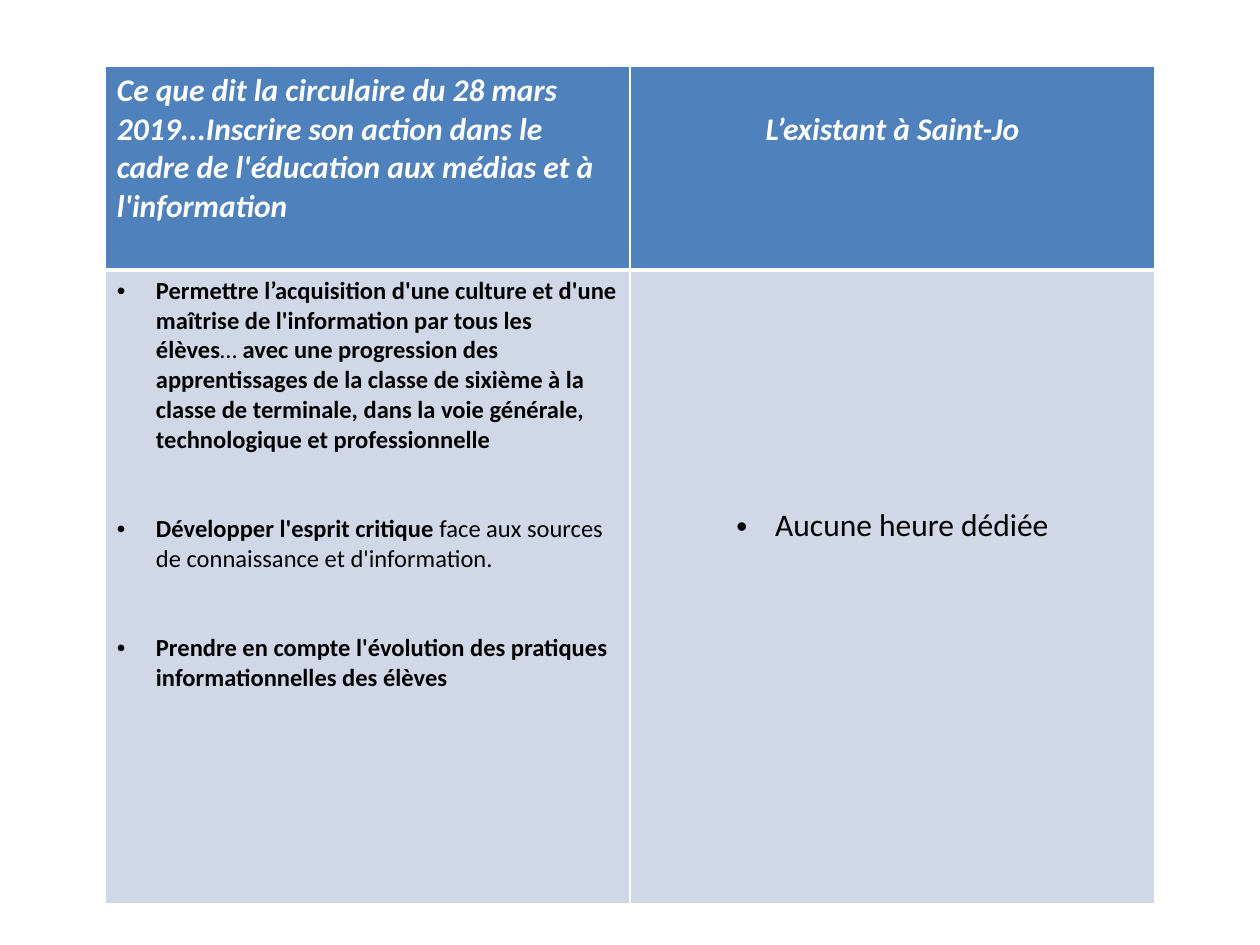
from dataclasses import dataclass

from lxml import etree
from pptx import Presentation
from pptx import util as u
from pptx.dml.color import RGBColor
from pptx.enum import text
from pptx.oxml import ns

EMU_PER_PX = 914400 / 126
INDENT = 39
SIDE_MARGIN, TOP_MARGIN = 12, 6
WHITE, BLACK, BLUE, PALE_BLUE = "FFFFFF", "000000", "4F81BD", "D0D8E8"
HEADER = {"name": "Calibri", "size": u.Pt(18), "bold": True, "italic": True}
STRONG = {"name": "Calibri", "size": u.Pt(14), "bold": True, "italic": False}
PLAIN = {**STRONG, "bold": False}
ANSWER = {**PLAIN, "size": u.Pt(18)}


@dataclass(frozen=True)
class Run:
    words: str
    font: dict


@dataclass(frozen=True)
class TableCell:
    row: int
    column: int
    paragraphs: list[list[Run]]
    fill: str
    ink: str
    borders: dict[str, int]
    top_margin: int = TOP_MARGIN
    bulleted: bool = False
    centered: bool = False


HEADER_BORDERS = {"L": 1, "R": 1, "T": 1, "B": 3}
BODY_BORDERS = {"L": 1, "R": 1, "T": 3, "B": 1}
CELLS = [
    TableCell(0, 0, [[Run("Ce que dit la circulaire du 28 mars 2019...Inscrire son action dans le "
                          "cadre de l'éducation aux médias et à l'information", HEADER)]],
              BLUE, WHITE, HEADER_BORDERS),
    TableCell(0, 1, [[Run("L’existant à Saint-Jo", HEADER)]],
              BLUE, WHITE, HEADER_BORDERS, top_margin=45, centered=True),
    TableCell(1, 0, [
        [Run("Permettre l’acquisition d'une culture et d'une maîtrise de l'information "
             "par tous les élèves", STRONG),
         Run("… ", PLAIN),
         Run("avec une progression des apprentissages de la classe de sixième à la classe de "
             "terminale, dans la voie générale, technologique et professionnelle", STRONG)],
        [Run("Développer l'esprit critique ", STRONG),
         Run("face aux sources de connaissance et d'information.", PLAIN)],
        [Run("Prendre en compte l'évolution des pratiques informationnelles des élèves", STRONG)],
    ], PALE_BLUE, BLACK, BODY_BORDERS, bulleted=True),
    TableCell(1, 1, [[Run("Aucune heure dédiée", ANSWER)]],
              PALE_BLUE, BLACK, BODY_BORDERS, top_margin=237, bulleted=True, centered=True),
]


def px(length: int) -> int:
    return round(length * EMU_PER_PX)


def color(value: str) -> RGBColor:
    return RGBColor.from_string(value)


def set_attributes(target, values: dict) -> None:
    for name, value in values.items():
        setattr(target, name, value)


def add_bullet(paragraph) -> None:
    properties = paragraph._p.get_or_add_pPr()
    properties.set("marL", str(px(INDENT)))
    properties.set("indent", str(-px(INDENT)))
    font = etree.SubElement(properties, ns.qn("a:buFont"))
    font.set("typeface", "Arial")
    etree.SubElement(properties, ns.qn("a:buChar")).set("char", "•")


def add_borders(cell, borders: dict[str, int]) -> None:
    properties = cell._tc.get_or_add_tcPr()
    for position, (side, width) in enumerate(borders.items()):
        line = etree.Element(ns.qn(f"a:ln{side}"), w=str(u.Pt(width)))
        fill = etree.SubElement(line, ns.qn("a:solidFill"))
        etree.SubElement(fill, ns.qn("a:srgbClr")).set("val", WHITE)
        properties.insert(position, line)


def fill_cell(table, content: TableCell) -> None:
    cell = table.cell(content.row, content.column)
    set_attributes(cell, {
        "margin_left": px(SIDE_MARGIN), "margin_right": px(SIDE_MARGIN),
        "margin_top": px(content.top_margin), "margin_bottom": px(TOP_MARGIN),
        "vertical_anchor": text.MSO_ANCHOR.TOP,
    })
    cell.fill.solid()
    cell.fill.fore_color.rgb = color(content.fill)
    add_borders(cell, content.borders)
    for index, runs in enumerate(content.paragraphs):
        frame = cell.text_frame
        paragraph = frame.add_paragraph() if index else frame.paragraphs[0]
        paragraph.alignment = text.PP_ALIGN.CENTER if content.centered else text.PP_ALIGN.LEFT
        if index:
            paragraph.space_before = u.Pt(34)
        if content.bulleted:
            add_bullet(paragraph)
        for item in runs:
            run = paragraph.add_run()
            run.text = item.words
            set_attributes(run.font, item.font)
            run.font.color.rgb = color(content.ink)


def main() -> None:
    """Build the slide comparing the circular with current practice."""
    presentation = Presentation()
    set_attributes(presentation, {"slide_width": px(1260), "slide_height": px(945)})
    slide = presentation.slides.add_slide(presentation.slide_layouts[6])
    shape = slide.shapes.add_table(2, 2, px(105), px(66), px(1050), px(838))
    table = shape.table
    set_attributes(table, {"first_row": False, "horz_banding": False})
    for row, height in zip(table.rows, (204, 634)):
        row.height = px(height)
    for content in CELLS:
        fill_cell(table, content)
    presentation.save("out.pptx")


if __name__ == "__main__":
    main()
